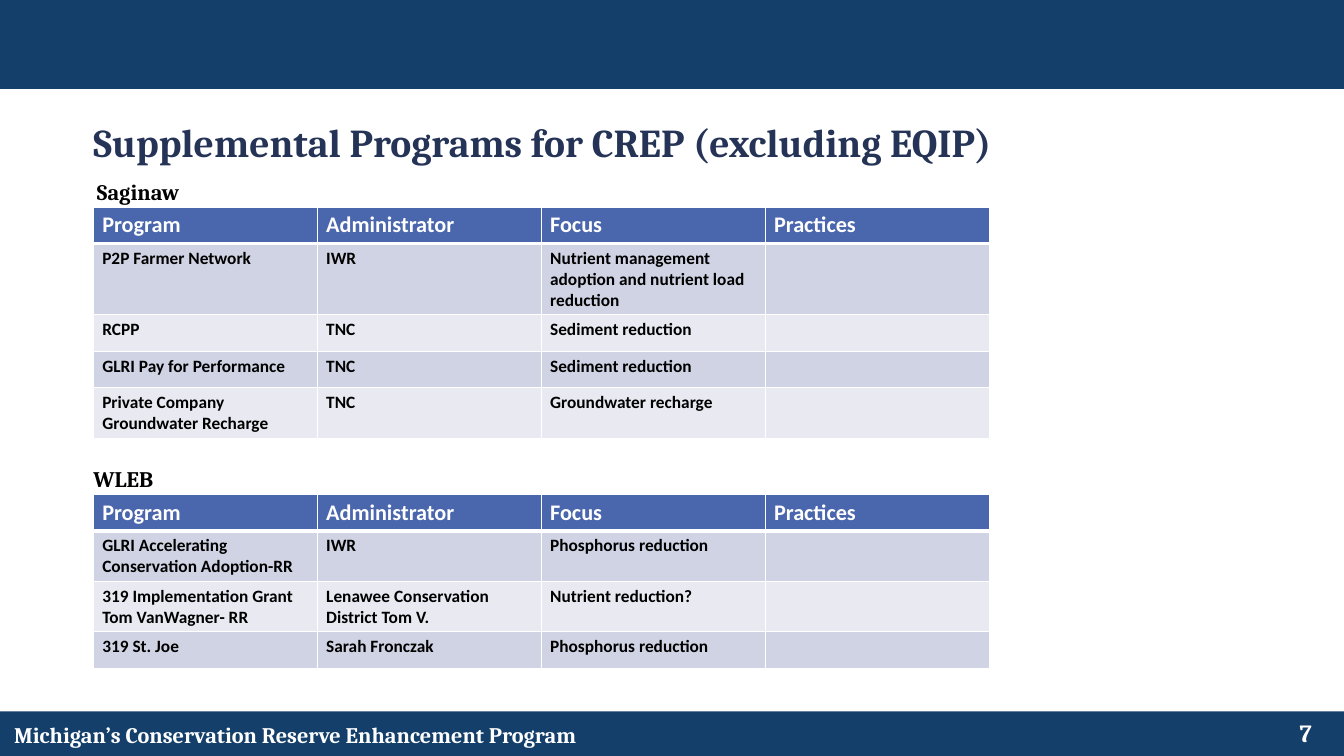
from lxml.etree import SubElement
from pptx import Presentation
from pptx.dml.color import RGBColor
from pptx.enum.shapes import MSO_SHAPE
from pptx.oxml.ns import qn
from pptx.util import Inches, Pt

SLIDE_WIDTH = 15.11
TABLE_LEFT = 1.05
TABLE_WIDTH = 10.07
ROW_HEIGHT = 0.41
HEADER = ("Program", "Administrator", "Focus", "Practices")
SAGINAW = [
    HEADER,
    ("P2P Farmer Network", "IWR", "Nutrient management adoption and nutrient load reduction", ""),
    ("RCPP", "TNC", "Sediment reduction", ""),
    ("GLRI Pay for Performance", "TNC", "Sediment reduction", ""),
    ("Private Company Groundwater Recharge", "TNC", "Groundwater recharge", ""),
]
WLEB = [
    HEADER,
    ("GLRI Accelerating Conservation Adoption-RR", "IWR", "Phosphorus reduction", ""),
    ("319 Implementation Grant Tom VanWagner- RR", "Lenawee Conservation District Tom V.",
     "Nutrient reduction?", ""),
    ("319 St. Joe", "Sarah Fronczak", "Phosphorus reduction", ""),
]


def color(value):
    return RGBColor.from_string(value)


def add_run(paragraph, text, size, font_name, font_color):
    run = paragraph.add_run()
    run.text = text
    run.font.size = Pt(size)
    run.font.name = font_name
    run.font.bold = True
    run.font.color.rgb = color(font_color)


def add_band(slide, top, height):
    shape = slide.shapes.add_shape(
        MSO_SHAPE.RECTANGLE, 0, Inches(top), Inches(SLIDE_WIDTH), Inches(height))
    shape.shadow.inherit = False
    shape.fill.solid()
    shape.fill.fore_color.rgb = color("143F6A")
    shape.line.fill.background()


def add_text(slide, box, text, size, font_color, insets=(0, 0)):
    shape = slide.shapes.add_textbox(*map(Inches, box))
    frame = shape.text_frame
    frame.word_wrap = True
    frame.margin_left = frame.margin_right = Inches(insets[0])
    frame.margin_top = frame.margin_bottom = Inches(insets[1])
    paragraph = frame.paragraphs[0]
    add_run(paragraph, text, size, "Cambria", font_color)
    return paragraph


def set_borders(cell, top, bottom):
    properties = cell._tc.get_or_add_tcPr()
    for side, width in (("L", 1), ("R", 1), ("T", top), ("B", bottom)):
        line = SubElement(properties, qn(f"a:ln{side}"), w=str(Pt(width)))
        fill = SubElement(line, qn("a:solidFill"))
        SubElement(fill, qn("a:srgbClr"), val="FFFFFF")


def add_program_table(slide, top, rows):
    table = slide.shapes.add_table(
        len(rows), len(HEADER), Inches(TABLE_LEFT), Inches(top),
        Inches(TABLE_WIDTH), Inches(ROW_HEIGHT * len(rows))).table
    for row_index, row in enumerate(rows):
        is_header = row_index == 0
        size, font_color = (18, "FFFFFF") if is_header else (14, "000000")
        band = "D0D3E3" if row_index % 2 else "E9EAF1"
        for column_index, text in enumerate(row):
            cell = table.cell(row_index, column_index)
            set_borders(cell, 3 if row_index == 1 else 1, 3 if is_header else 1)
            cell.fill.solid()
            cell.fill.fore_color.rgb = color("4A66AC" if is_header else band)
            if text:
                add_run(cell.text_frame.paragraphs[0], text, size, "Calibri", font_color)


def main():
    presentation = Presentation()
    presentation.slide_width = Inches(SLIDE_WIDTH)
    presentation.slide_height = Inches(8.5)
    slide = presentation.slides.add_slide(presentation.slide_layouts[6])

    add_band(slide, 0, 1)
    add_band(slide, 8, 0.5)
    add_text(slide, (0.06, 8.06, 8.25, 0.4),
             "Michigan’s Conservation Reserve Enhancement Program", 18, "FFFFFF", (0.1, 0.05))
    page_number = add_text(slide, (14.61, 8.12, 0.45, 0.29), "7", 20, "FFFFFF")
    page_number.line_spacing = Pt(20.5)

    add_text(slide, (TABLE_LEFT, 1.33, 13.5, 0.55),
             "Supplemental Programs for CREP (excluding EQIP)", 32, "253356")
    add_text(slide, (1.09, 2, 9.8, 0.3), "Saginaw", 18, "000000")
    add_program_table(slide, 2.33, SAGINAW)
    add_text(slide, (TABLE_LEFT, 5.23, 9.8, 0.3), "WLEB", 18, "000000")
    add_program_table(slide, 5.56, WLEB)

    presentation.save("out.pptx")


if __name__ == "__main__":
    main()
